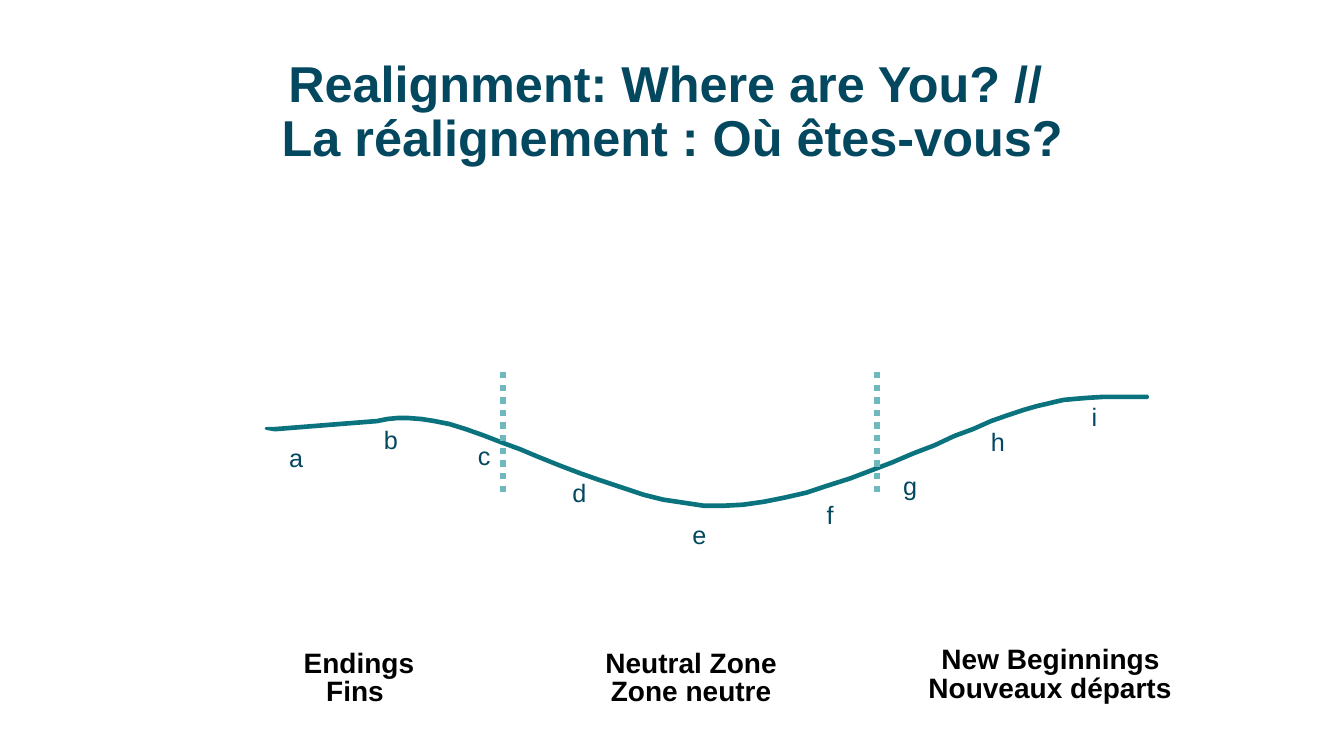
from lxml.etree import SubElement
from pptx import Presentation
from pptx.dml.color import RGBColor
from pptx.enum.dml import MSO_LINE_DASH_STYLE as Dash
from pptx.enum.shapes import MSO_CONNECTOR_TYPE as Connector
from pptx.enum.text import MSO_ANCHOR as Anchor, MSO_AUTO_SIZE as AutoSize, PP_ALIGN as Align
from pptx.oxml.ns import qn
from pptx.util import Inches, Pt

COLUMNS, ROWS = 133.3, 75  # grid of the slide, ten cells to the inch
NAVY, TEAL, AQUA, BLACK = "044860", "0A737D", "6FB9BC", "000000"


def color(hex_string):
    return RGBColor.from_string(hex_string)


class ChangeCurveSlide:
    """Holds the text style and the slide being drawn."""

    font_name = "Arial"

    def __init__(self, deck):
        self.slide = deck.slides.add_slide(deck.slide_layouts[6])
        self.column = deck.slide_width / COLUMNS
        self.row = deck.slide_height / ROWS

    def point(self, x, y):
        return round(x * self.column), round(y * self.row)

    def text(self, words, x, y, width, height, font, frame, paragraph):
        box = self.slide.shapes.add_textbox(*self.point(x, y), *self.point(width, height))
        body = box.text_frame
        body.text = words
        first = body.paragraphs[0]
        for target, values in ((body, frame), (first, paragraph)):
            for name, value in values.items():
                setattr(target, name, value)
        for run in first.runs:
            run.font.name = self.font_name
            run.font.size = Pt(font["size"])
            run.font.bold = font["bold"]
            run.font.color.rgb = color(font["color"])

    def divider(self, x, bottom, top):
        line = self.slide.shapes.add_connector(
            Connector.STRAIGHT, *self.point(x, bottom), *self.point(x, top))
        line.line.color.rgb = color(AQUA)
        line.line.width = Pt(4.5)
        line.line.dash_style = Dash.ROUND_DOT
        SubElement(line._element.spPr, qn("a:effectLst"))

    def ribbon(self, upper_edge, thickness):
        lower_edge = [(x, y + thickness) for x, y in reversed(upper_edge[1:])]
        start, *others = [self.point(x, y) for x, y in upper_edge + lower_edge]
        builder = self.slide.shapes.build_freeform(*start)
        builder.add_line_segments(others, close=True)
        curve = builder.convert_to_shape()
        curve.shadow.inherit = False
        curve.fill.solid()
        curve.fill.fore_color.rgb = color(BLACK)
        curve.line.color.rgb = color(TEAL)
        curve.line.width = Pt(2.25)


TITLE_FONT = {"size": 36, "bold": True, "color": NAVY}
PHASE_FONT = {"size": 20, "bold": True, "color": BLACK}
STAGE_FONT = {"size": 18, "bold": False, "color": NAVY}
TITLE_FRAME = {"word_wrap": True, "vertical_anchor": Anchor.MIDDLE}
STAGE_FRAME = {"word_wrap": False, "auto_size": AutoSize.SHAPE_TO_FIT_TEXT}
PHASE_FRAME = STAGE_FRAME | dict.fromkeys(
    ("margin_left", "margin_top", "margin_right", "margin_bottom"), 0)

# Upper edge of the curve, left to right
CURVE = [
    (26.4, 42.5), (27.3, 42.5), (37.4, 41.7), (38.4, 41.5), (39.4, 41.4), (40.5, 41.4),
    (41.8, 41.5), (43.1, 41.7), (44.6, 42), (46.2, 42.5), (47.9, 43.1), (49.7, 43.8),
    (51.6, 44.5), (53.5, 45.3), (55.5, 46.1), (57.6, 46.9), (59.6, 47.6), (61.7, 48.3),
    (63.8, 49), (65.8, 49.5), (67.8, 49.8), (69.8, 50.1), (71.8, 50.1), (73.7, 50),
    (75.8, 49.7), (77.8, 49.3), (80, 48.8), (82.1, 48.1), (84.3, 47.4), (86.4, 46.6),
    (88.5, 45.8), (90.6, 44.9), (92.7, 44.1), (94.6, 43.2), (96.5, 42.5), (98.3, 41.7),
    (100, 41.1), (101.5, 40.6), (102.9, 40.2), (103.8, 40), (104.6, 39.8), (105.5, 39.6),
    (106.6, 39.5), (107.8, 39.4), (109.4, 39.3), (113.8, 39.3)]

# English and French names: text, left, top, width
PHASES = [
    ("Endings", 27.4, 64, 16.4), ("Fins ", 27.4, 66.8, 16.4),
    ("Neutral Zone", 60, 64, 17.1), ("Zone neutre", 60.5, 66.8, 16.1),
    ("New Beginnings", 93.3, 63.6, 21.8), ("Nouveaux départs", 92, 66.5, 24.3)]

# Stages along the curve: letter, left, top, width
STAGES = [
    ("a", 27.7, 43.4, 3.2), ("b", 37.1, 41.6, 3.4), ("c", 46.4, 43.2, 3.1),
    ("d", 55.8, 46.9, 3.4), ("e", 67.7, 51, 3.4), ("f", 81, 49, 2.8),
    ("g", 88.6, 46.2, 3.2), ("h", 97.3, 41.8, 3.4), ("i", 107.3, 39.3, 2.6)]


def main():
    deck = Presentation()
    deck.slide_width, deck.slide_height = Inches(13.33), Inches(7.5)
    page = ChangeCurveSlide(deck)

    # Title
    page.text("Realignment: Where are You? // \vLa réalignement : Où êtes-vous?",
              9.2, 4, 115, 14.5, TITLE_FONT, TITLE_FRAME,
              {"alignment": Align.CENTER, "line_spacing": 0.9})

    # Curve and the borders between phases
    page.ribbon(CURVE, 0.15)
    for border in (49.9, 87):
        page.divider(border, 48.8, 36.5)

    # Phase names
    for name, left, top, width in PHASES:
        page.text(name, left, top, width, 3.4, PHASE_FONT, PHASE_FRAME,
                  {"alignment": Align.CENTER})

    # Stage letters
    for letter, left, top, width in STAGES:
        page.text(letter, left, top, width, 4, STAGE_FONT, STAGE_FRAME,
                  {"alignment": Align.LEFT})

    deck.save("out.pptx")


if __name__ == "__main__":
    main()
